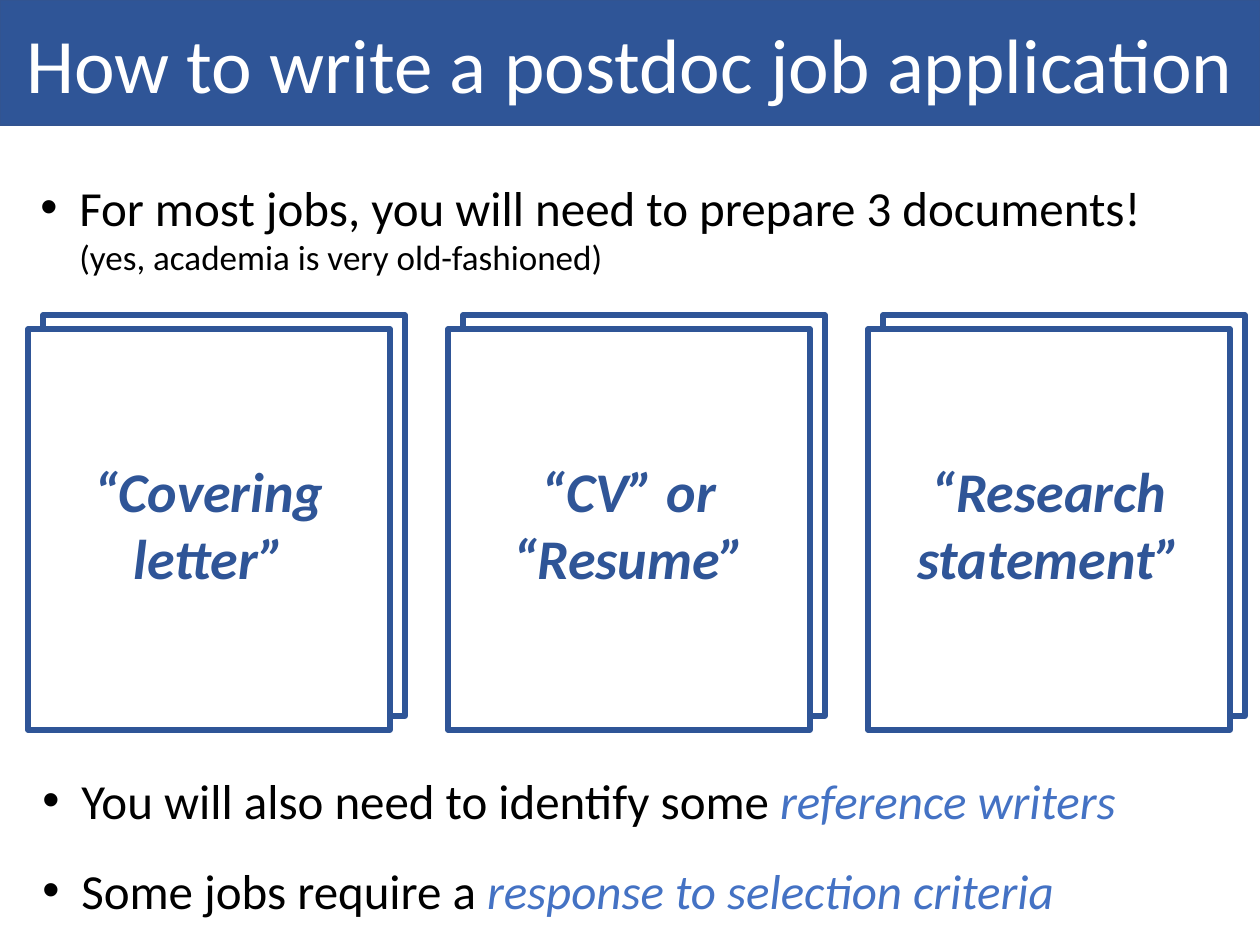
import pptx
import pptx.util
import pptx.dml.color
import pptx.enum.shapes
import pptx.enum.text
from lxml import etree

TITLE = "How to write a postdoc job application"
DOCUMENTS = ["“Covering letter”", "“CV” or “Resume”", "“Research statement”"]

NAVY, BLUE, BLACK, WHITE = "2F5597", "4472C4", "000000", "FFFFFF"
TITLE_EDGE = "325491"

# Each bullet is a list of runs: (text, size, colour, italic)
INTRO = [[
    ("For most jobs, you will need to prepare 3 documents! ", 28, BLACK, False),
    ("(yes, academia is very old-fashioned)", 20, BLACK, False),
]]
EXTRAS = [
    [("You will also need to identify some ", 28, BLACK, False),
     ("reference writers", 28, BLUE, True)],
    [("Some jobs require a ", 28, BLACK, False),
     ("response to selection criteria", 28, BLUE, True)],
]

# Layout in px, 126 to the inch
EMU_PER_PX = 914400 / 126
SLIDE_W, SLIDE_H = 1260, 945
TITLE_H = 125
PAGE_LEFT, PAGE_TOP, PAGE_W, PAGE_H = 28, 329, 362, 401
PAGE_STEP = 420
BACK_DX, BACK_DY = 15, -14
LABEL_TOP, LABEL_H = 450, 149
BULLET_INDENT = 39


def px(length):
    return pptx.util.Emu(round(length * EMU_PER_PX))


def colour(hex_code):
    return pptx.dml.color.RGBColor.from_string(hex_code)


def add_box(slide, left, top, width, height, fill, edge, edge_pt):
    box = slide.shapes.add_shape(pptx.enum.shapes.MSO_SHAPE.RECTANGLE,
                                 px(left), px(top), px(width), px(height))
    box.shadow.inherit = False
    box.fill.solid()
    box.fill.fore_color.rgb = colour(fill)
    box.line.color.rgb = colour(edge)
    box.line.width = pptx.util.Pt(edge_pt)
    return box


def add_text_frame(slide, left, top, width, height):
    frame = slide.shapes.add_textbox(px(left), px(top), px(width), px(height)).text_frame
    frame.word_wrap = True
    frame.auto_size = pptx.enum.text.MSO_AUTO_SIZE.SHAPE_TO_FIT_TEXT
    return frame


def style(font, size, hex_code, bold=False, italic=False):
    font.name = "Calibri"
    font.size = pptx.util.Pt(size)
    font.color.rgb = colour(hex_code)
    font.bold = bold
    font.italic = italic


def set_centred(frame, text, size, hex_code, **emphasis):
    paragraph = frame.paragraphs[0]
    paragraph.text = text
    paragraph.alignment = pptx.enum.text.PP_ALIGN.CENTER
    style(paragraph.font, size, hex_code, **emphasis)


def set_bullet(paragraph):
    properties = paragraph._p.get_or_add_pPr()
    properties.set("marL", str(px(BULLET_INDENT)))
    properties.set("indent", str(-px(BULLET_INDENT)))
    for tag, key, value in (("buFont", "typeface", "Arial"), ("buChar", "char", "•")):
        etree.SubElement(properties, pptx.oxml.ns.qn("a:" + tag)).set(key, value)


def add_bullets(slide, bullets, left, top, width, height, space_after):
    frame = add_text_frame(slide, left, top, width, height)
    for index, runs in enumerate(bullets):
        paragraph = frame.add_paragraph() if index else frame.paragraphs[0]
        paragraph.space_after = pptx.util.Pt(space_after)
        set_bullet(paragraph)
        for text, size, hex_code, italic in runs:
            run = paragraph.add_run()
            run.text = text
            style(run.font, size, hex_code, italic=italic)


def main():
    deck = pptx.Presentation()
    deck.slide_width, deck.slide_height = px(SLIDE_W), px(SLIDE_H)
    slide = deck.slides.add_slide(deck.slide_layouts[6])

    # Title band
    band = add_box(slide, 0, 0, SLIDE_W, TITLE_H, NAVY, TITLE_EDGE, 1)
    band.text_frame.word_wrap = True
    band.text_frame.vertical_anchor = pptx.enum.text.MSO_ANCHOR.MIDDLE
    set_centred(band.text_frame, TITLE, 44, WHITE)

    # Documents: a back page, a front page and a label each
    for index, document in enumerate(DOCUMENTS):
        left = PAGE_LEFT + index * PAGE_STEP
        for dx, dy in ((BACK_DX, BACK_DY), (0, 0)):
            add_box(slide, left + dx, PAGE_TOP + dy, PAGE_W, PAGE_H, WHITE, NAVY, 3)
        label = add_text_frame(slide, left, LABEL_TOP, PAGE_W, LABEL_H)
        set_centred(label, document, 32, NAVY, bold=True, italic=True)

    # Bullets above and below the documents
    add_bullets(slide, INTRO, 28, 171, 1137, 115, space_after=24)
    add_bullets(slide, EXTRAS, 30, 764, 1137, 164, space_after=18)

    deck.save("out.pptx")


if __name__ == "__main__":
    main()
